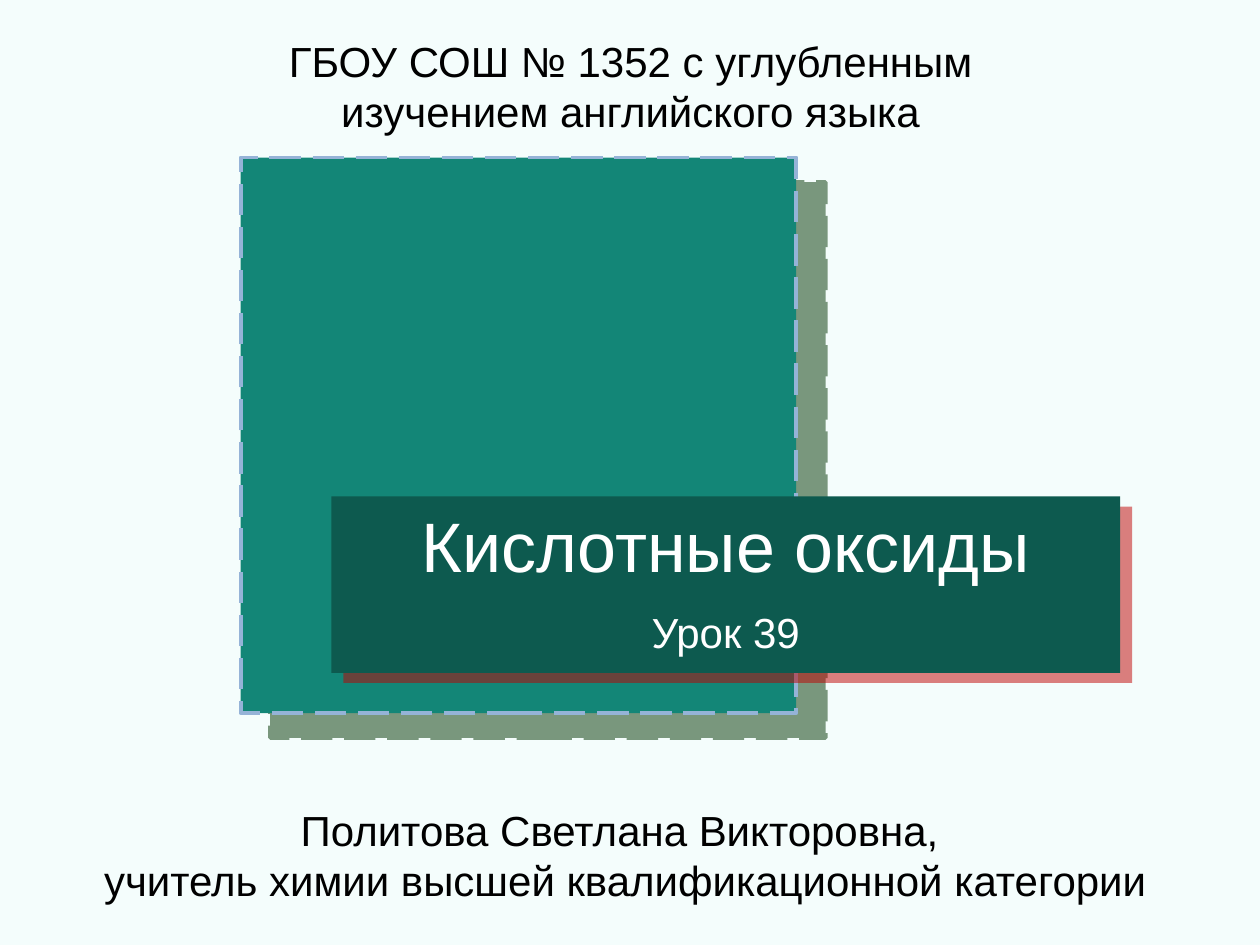
from lxml.etree import SubElement
from pptx import Presentation
from pptx.dml.color import RGBColor
from pptx.enum.dml import MSO_LINE
from pptx.enum.shapes import MSO_SHAPE
from pptx.enum.text import MSO_ANCHOR, PP_ALIGN
from pptx.oxml.ns import qn
from pptx.util import Inches, Pt

COLORS = {
    "background": "F4FDFC",
    "square": "138677",
    "square_line": "95B3D7",
    "square_shadow": "003300",
    "banner": "0D5A4F",
    "banner_shadow": "C00000",
    "light_text": "FFFFFF",
    "dark_text": "000000",
}
FONT = "Arial"


def color(name):
    return RGBColor.from_string(COLORS[name])


def box(left, top, width, height):
    return [Inches(length) for length in (left, top, width, height)]


def add_shadow(shape, color_name, distance):
    shape.shadow.inherit = False
    effects = shape._element.spPr.find(qn("a:effectLst"))
    shadow = SubElement(
        effects, qn("a:outerShdw"), dist=str(Pt(distance)),
        dir=str(40 * 60000), algn="tl", rotWithShape="0",
    )
    shade = SubElement(shadow, qn("a:srgbClr"), val=COLORS[color_name])
    SubElement(shade, qn("a:alpha"), val="50000")


def add_panel(shapes, position, fill, shadow, distance, line=None):
    shape = shapes.add_shape(MSO_SHAPE.RECTANGLE, *box(*position))
    shape.fill.solid()
    shape.fill.fore_color.rgb = color(fill)
    if line:
        shape.line.color.rgb = color(line)
        shape.line.width = Pt(2.25)
        shape.line.dash_style = MSO_LINE.LONG_DASH
    else:
        shape.line.fill.background()
    add_shadow(shape, shadow, distance)


def write_text(shape, lines, text_color="dark_text", anchor=MSO_ANCHOR.TOP,
               inset=None, line_spacing=None, space_ratio=0):
    frame = shape.text_frame
    frame.word_wrap = True
    frame.vertical_anchor = anchor
    if inset is not None:
        frame.margin_left = frame.margin_right = Inches(inset)
        frame.margin_top = frame.margin_bottom = Inches(inset)
    for index, (text, size) in enumerate(lines):
        paragraph = frame.add_paragraph() if index else frame.paragraphs[0]
        paragraph.alignment = PP_ALIGN.CENTER
        paragraph.line_spacing = line_spacing
        paragraph.space_after = Pt(size * space_ratio)
        run = paragraph.add_run()
        run.text = text
        run.font.name = FONT
        run.font.size = Pt(size)
        run.font.color.rgb = color(text_color)


def add_title_group(slide):
    shapes = slide.shapes.add_group_shape().shapes
    banner = (2.63, 3.94, 6.26, 1.4)
    add_panel(shapes, (1.91, 1.25, 4.41, 4.41), "square", "square_shadow", 22,
              line="square_line")
    add_panel(shapes, banner, "banner", "banner_shadow", 9)
    write_text(
        shapes.add_textbox(*box(*banner)),
        [("Кислотные оксиды", 40), ("Урок 39", 24)],
        text_color="light_text", anchor=MSO_ANCHOR.MIDDLE,
        inset=0.17, line_spacing=0.9, space_ratio=0.35,
    )


def add_author(slide):
    shape = slide.shapes.add_shape(
        MSO_SHAPE.SNIP_1_RECTANGLE, *box(0.26, 6.25, 9.49, 0.99))
    shape.fill.background()
    shape.line.fill.background()
    shape.shadow.inherit = False
    write_text(shape, [
        ("Политова Светлана Викторовна, ", 24),
        ("учитель химии высшей квалификационной категории", 24),
    ])


def main():
    presentation = Presentation()
    presentation.slide_width = Inches(10)
    presentation.slide_height = Inches(7.5)
    slide = presentation.slides.add_slide(presentation.slide_layouts[6])
    slide.background.fill.solid()
    slide.background.fill.fore_color.rgb = color("background")
    add_title_group(slide)
    school = slide.shapes.add_textbox(*box(1.84, 0.23, 6.33, 0.91))
    write_text(school, [
        ("ГБОУ СОШ № 1352 с углубленным изучением английского языка", 24)])
    add_author(slide)
    presentation.save("out.pptx")


if __name__ == "__main__":
    main()
